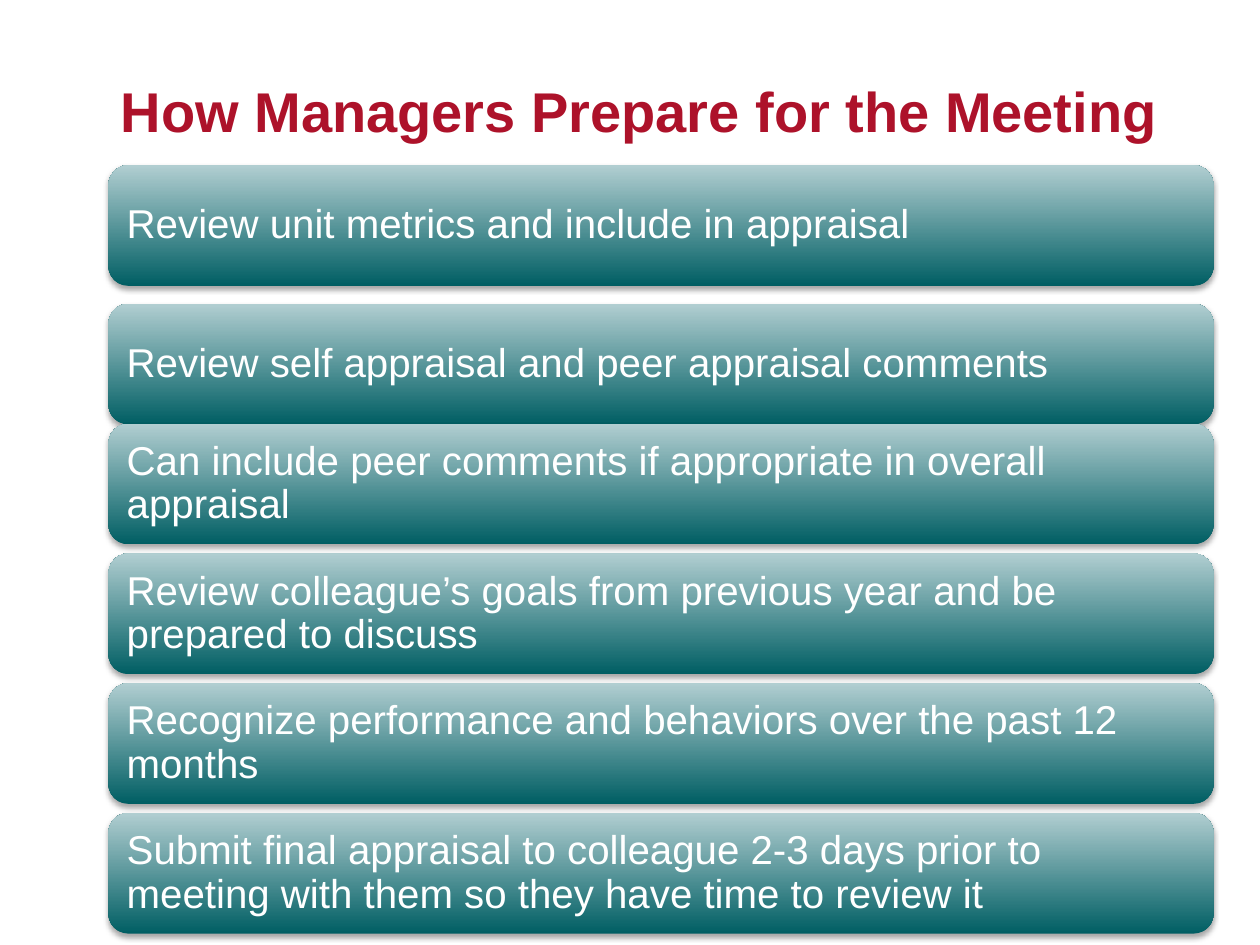
from lxml.etree import SubElement
from pptx import Presentation
from pptx.dml.color import RGBColor
from pptx.enum.shapes import MSO_SHAPE
from pptx.enum.text import MSO_ANCHOR, PP_ALIGN
from pptx.oxml.ns import qn
from pptx.util import Pt

CRIMSON = RGBColor(0xAD, 0x12, 0x2A)
TEAL = RGBColor(0x00, 0x5E, 0x63)
PALE_TEAL = RGBColor(0xB1, 0xCE, 0xD1)
WHITE = RGBColor(0xFF, 0xFF, 0xFF)

# Shared column of the title and the bars
LEFT, WIDTH = 62, 631.5
BAR_HEIGHT = 69
# The two upper bars stand apart; the lower four are evenly stepped
UPPER_TOP, UPPER_STEP = 94.4, 79.2
LOWER_TOP, LOWER_STEP = 242.1, 74.15

UPPER_STEPS = [
    "Review unit metrics and include in appraisal",
    "Review self appraisal and peer appraisal comments",
]
LOWER_STEPS = [
    "Can include peer comments if appropriate in overall appraisal",
    "Review colleague’s goals from previous year and be prepared to discuss",
    "Recognize performance and behaviors over the past 12 months",
    "Submit final appraisal to colleague 2-3 days prior to meeting with them "
    "so they have time to review it",
]


class SlideBuilder:
    title_font = {"name": "Arial", "size": Pt(32), "bold": True}
    bar_font = {"name": "Arial", "size": Pt(23), "bold": False}

    def __init__(self, slide):
        self.slide = slide

    def set_text(self, sp, text, font, color, inset):
        tf = sp.text_frame
        frame = {
            "word_wrap": True, "vertical_anchor": MSO_ANCHOR.MIDDLE,
            "margin_left": Pt(7.2), "margin_right": Pt(7.2),
            "margin_top": Pt(inset), "margin_bottom": Pt(inset),
        }
        for key, value in frame.items():
            setattr(tf, key, value)
        p = tf.paragraphs[0]
        p.alignment = PP_ALIGN.LEFT
        p.line_spacing = 0.9
        r = p.add_run()
        r.text = text
        for key, value in font.items():
            setattr(r.font, key, value)
        r.font.color.rgb = color

    def title(self, text, top, height):
        sp = self.slide.shapes.add_textbox(
            Pt(LEFT), Pt(top), Pt(WIDTH), Pt(height))
        self.set_text(sp, text, self.title_font, CRIMSON, 0)

    def bar(self, text, top):
        sp = self.slide.shapes.add_shape(
            MSO_SHAPE.ROUNDED_RECTANGLE,
            Pt(LEFT), Pt(top), Pt(WIDTH), Pt(BAR_HEIGHT))
        sp.line.fill.background()
        sp.fill.gradient()
        sp.fill.gradient_angle = 90
        for stop, color in zip(sp.fill.gradient_stops, (TEAL, PALE_TEAL)):
            stop.color.rgb = color
        self.soft_shadow(sp)
        self.set_text(sp, text, self.bar_font, WHITE, 7.2)

    def soft_shadow(self, sp):
        sp.shadow.inherit = False
        effects = sp.element.spPr.find(qn("a:effectLst"))
        shadow = SubElement(
            effects, qn("a:outerShdw"), blurRad=str(Pt(3.1)),
            dist=str(Pt(1.8)), dir="5400000", rotWithShape="0")
        color = SubElement(shadow, qn("a:srgbClr"), val="000000")
        SubElement(color, qn("a:alpha"), val="35000")


def main():
    prs = Presentation()
    prs.slide_width, prs.slide_height = Pt(720), Pt(540)
    s = SlideBuilder(prs.slides.add_slide(prs.slide_layouts[6]))

    # Title
    s.title("How Managers Prepare for the Meeting", 17.3, 96.5)

    # Bars, one per preparation step
    for i, text in enumerate(UPPER_STEPS):
        s.bar(text, UPPER_TOP + i * UPPER_STEP)
    for i, text in enumerate(LOWER_STEPS):
        s.bar(text, LOWER_TOP + i * LOWER_STEP)

    prs.save("out.pptx")


if __name__ == "__main__":
    main()
